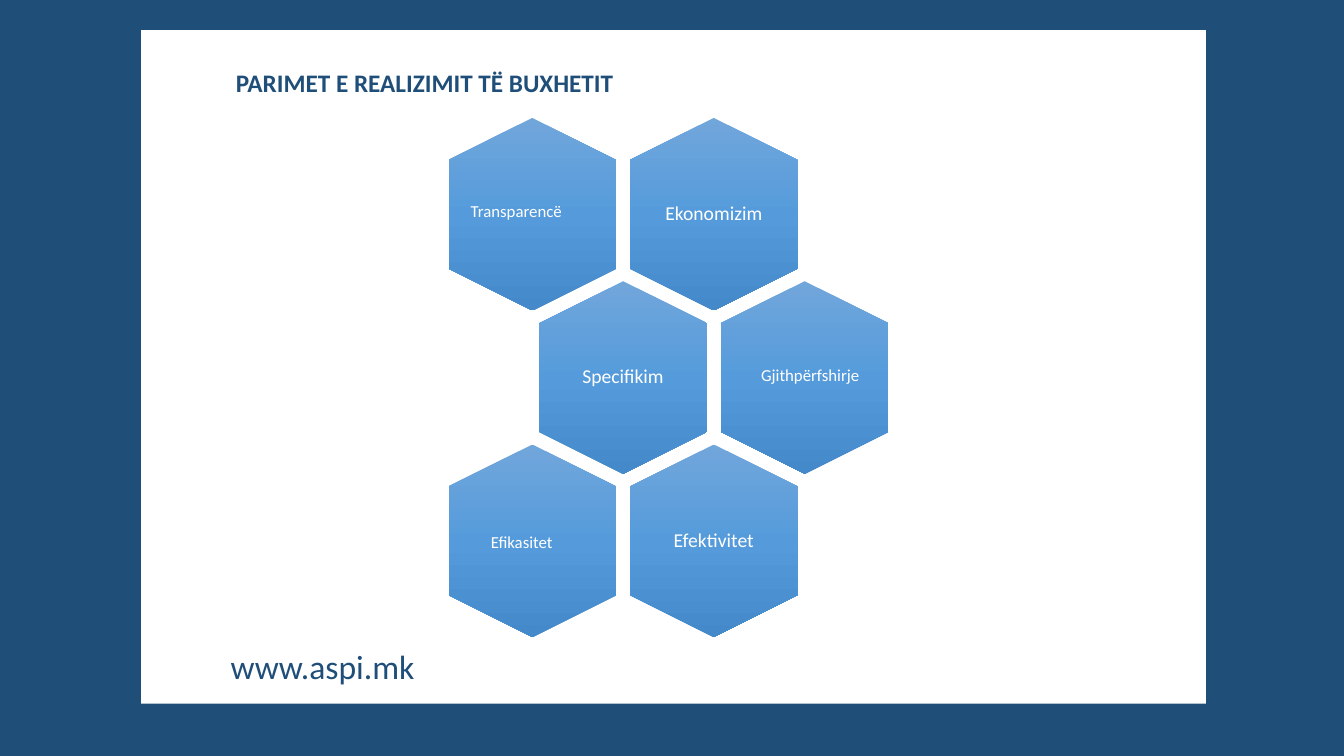
from dataclasses import dataclass

from lxml import etree
from pptx import Presentation
from pptx.dml.color import RGBColor
from pptx.enum.shapes import MSO_SHAPE
from pptx.enum.text import MSO_ANCHOR, MSO_AUTO_SIZE, PP_ALIGN
from pptx.oxml import parse_xml
from pptx.oxml.ns import nsdecls, qn
from pptx.util import Inches, Pt

RECT, HEXAGON = MSO_SHAPE.RECTANGLE, MSO_SHAPE.HEXAGON
MIDDLE, CENTER = MSO_ANCHOR.MIDDLE, PP_ALIGN.CENTER
FIT_SHAPE = MSO_AUTO_SIZE.SHAPE_TO_FIT_TEXT


@dataclass(frozen=True)
class Theme:
    """Colours, font and type sizes of the slide."""
    navy: str = "1F4E79"
    white: str = "FFFFFF"
    gradient: tuple = ((0, "71A6DB"), (50, "559BDB"), (100, "448ACA"))
    font: str = "Calibri"
    title: int = 18
    site: int = 24
    label: int = 14
    small_label: int = 12


THEME = Theme()

HEX_W, HEX_H = 1.66, 1.91
COL_PITCH, ROW_PITCH = 1.8, 1.62
LABEL_W, LABEL_H = 1.14, 1.32

# Each cell: row, column, text, and the box of a small label inside the cell.
PRINCIPLES = (
    (0, 1, "Ekonomizim", None),
    (0, 0, "Transparencë", (0.12, 0.77, 1.11)),
    (1, 0, "Specifikim", None),
    (1, 1, "Gjithpërfshirje", (0.3, 0.78, 1.18)),
    (2, 1, "Efektivitet", None),
    (2, 0, "Efikasitet", (0.32, 0.82, 0.82)),
)


def add_panel(slide, box, color):
    """Add a plain filled rectangle."""
    s = slide.shapes.add_shape(RECT, *map(Inches, box))
    s.shadow.inherit = False
    s.fill.solid()
    s.fill.fore_color.rgb = RGBColor.from_string(color)
    s.line.fill.background()


def add_text(slide, box, text, size, color, bold=False):
    """Add a one-line text box and return its shape and paragraph."""
    s = slide.shapes.add_textbox(*map(Inches, box))
    tf = s.text_frame
    tf.word_wrap = False
    tf.auto_size = FIT_SHAPE
    p = tf.paragraphs[0]
    p.text = text
    p.font.name = THEME.font
    p.font.size = Pt(size)
    p.font.bold = bold
    p.font.color.rgb = RGBColor.from_string(color)
    return s, p


def set_gradient(s):
    """Fill a shape with the theme gradient, running down the slide."""
    grad = parse_xml(f'<a:gradFill {nsdecls("a")} rotWithShape="0"><a:gsLst/>'
                     '<a:lin ang="5400000" scaled="0"/></a:gradFill>')
    for pos, color in THEME.gradient:
        stop = etree.SubElement(grad[0], qn("a:gs"), pos=str(pos * 1000))
        etree.SubElement(stop, qn("a:srgbClr"), val=color)
    s._element.spPr.find(qn("a:prstGeom")).addnext(grad)


def add_hexagon(slide, cx, cy):
    """Add an upright hexagon around a centre point."""
    s = slide.shapes.add_shape(HEXAGON, Inches(cx - HEX_H / 2), Inches(cy - HEX_W / 2),
                               Inches(HEX_H), Inches(HEX_W))
    s.rotation = 90
    s.adjustments[0] = 0.25
    s.shadow.inherit = False
    s.line.fill.background()
    set_gradient(s)


def add_label(slide, cx, cy, text):
    """Add a label centred in its hexagon."""
    box = (cx - LABEL_W / 2, cy - LABEL_H / 2, LABEL_W, LABEL_H)
    s, p = add_text(slide, box, text, THEME.label, THEME.white)
    tf = s.text_frame
    tf.word_wrap = True
    tf.auto_size = MSO_AUTO_SIZE.NONE
    tf.vertical_anchor = MIDDLE
    tf.margin_left = tf.margin_right = tf.margin_top = tf.margin_bottom = Inches(0.06)
    p.alignment = CENTER
    p.line_spacing = 0.9


def add_honeycomb(slide, left, top):
    """Add the staggered grid of principles from its top left corner."""
    for row, col, text, small in PRINCIPLES:
        x = left + (col + row % 2 / 2) * COL_PITCH
        y = top + row * ROW_PITCH
        cx, cy = x + HEX_W / 2, y + HEX_H / 2
        add_hexagon(slide, cx, cy)
        if small:
            dx, dy, width = small
            add_text(slide, (x + dx, y + dy, width, 0.3), text,
                     THEME.small_label, THEME.white)
        else:
            add_label(slide, cx, cy, text)


def add_frame(slide, width, height):
    """Add the navy border, white page and site address."""
    add_panel(slide, (0, 0, width, height), THEME.navy)
    add_panel(slide, (1.4, 0.3, 10.56, 6.68), THEME.white)
    add_text(slide, (2.19, 6.36, 2.04, 0.5), "www.aspi.mk", THEME.site, THEME.navy)


def main():
    """Build the slide and save it."""
    width, height = 13.33, 7.5
    prs = Presentation()
    prs.slide_width, prs.slide_height = Inches(width), Inches(height)
    slide = prs.slides.add_slide(prs.slide_layouts[6])
    add_frame(slide, width, height)
    add_text(slide, (2.24, 0.62, 4.11, 0.4), "PARIMET E REALIZIMIT TË BUXHETIT",
             THEME.title, THEME.navy, bold=True)
    add_honeycomb(slide, 4.45, 1.17)
    prs.save("out.pptx")


if __name__ == "__main__":
    main()
